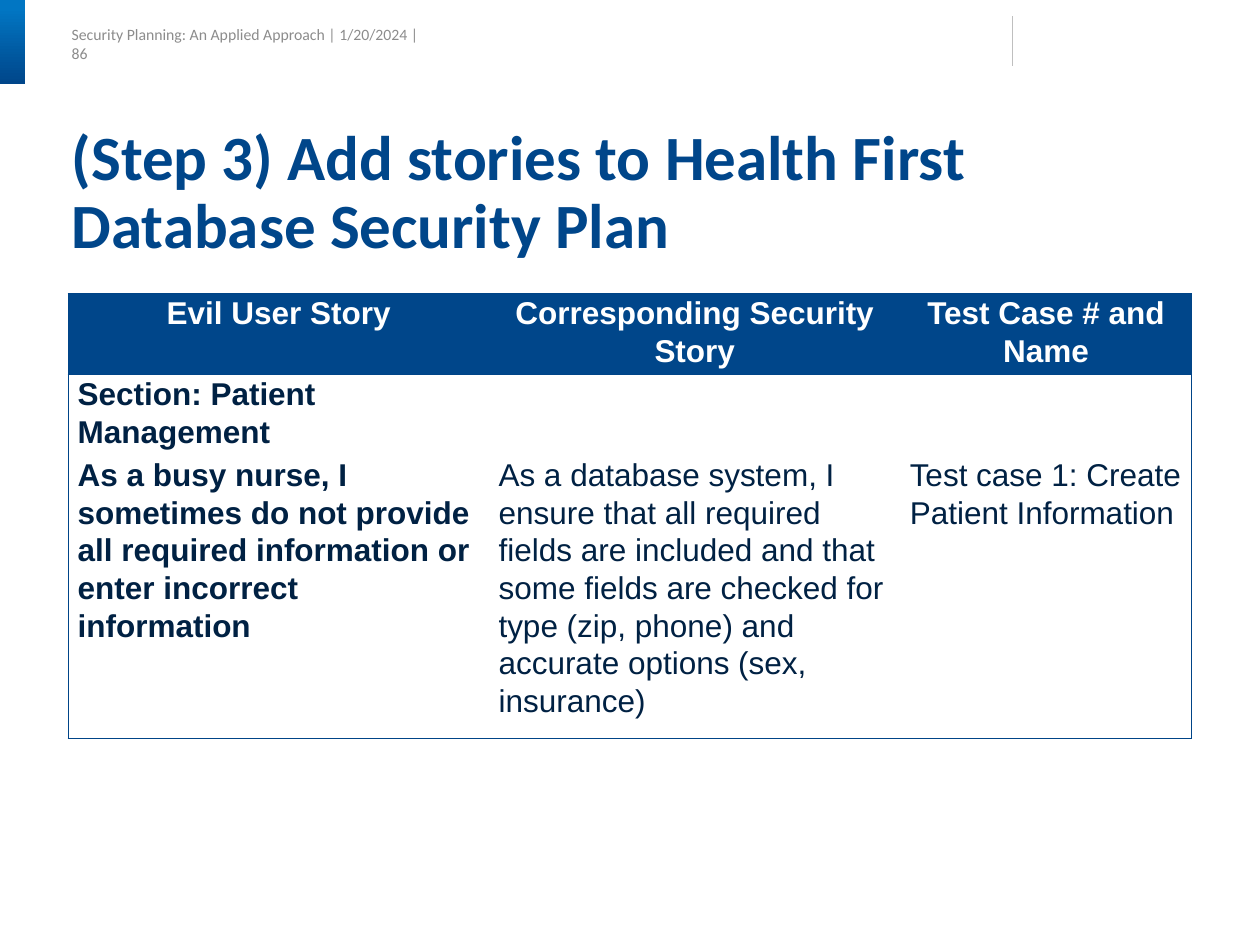
from lxml.etree import SubElement
from pptx import Presentation
from pptx.dml.color import RGBColor
from pptx.enum.shapes import MSO_CONNECTOR as Connector, MSO_SHAPE as Shape
from pptx.enum.text import MSO_ANCHOR as Anchor, MSO_AUTO_SIZE as AutoSize, PP_ALIGN as Align
from pptx.oxml.ns import qn
from pptx.util import Pt

COLORS = {
    "blue": "00468A",
    "light blue": "0176C3",
    "border": "004487",
    "body": "002143",
    "white": "FFFFFF",
    "header": "8C8C8C",
    "rule": "BFBFBF",
}


def set_font(paragraph, name, size, color, bold=False):
    paragraph.font.name = name
    paragraph.font.size = Pt(size)
    paragraph.font.bold = bold
    paragraph.font.color.rgb = RGBColor.from_string(COLORS[color])


def set_borders(cell, visible):
    properties = cell._tc.get_or_add_tcPr()
    for side in "LRTB":
        line = SubElement(properties, qn(f"a:ln{side}"), w=str(Pt(0.75)))
        if side in visible:
            fill = SubElement(line, qn("a:solidFill"))
            SubElement(fill, qn("a:srgbClr"), val=COLORS["border"])
        else:
            SubElement(line, qn("a:noFill"))


deck = Presentation()
deck.slide_width, deck.slide_height = Pt(720), Pt(540)
page = deck.slides.add_slide(deck.slide_layouts[5])

# Running header
header = page.shapes.add_textbox(Pt(41), Pt(16.5), Pt(204.5), Pt(16.5))
frame = header.text_frame
frame.margin_left = frame.margin_top = frame.margin_right = frame.margin_bottom = 0
frame.vertical_anchor = Anchor.MIDDLE
frame.word_wrap = False
frame.text = "Security Planning: An Applied Approach | 1/20/2024 | 86"
set_font(frame.paragraphs[0], "Calibri", 9, "header")

# Corner accent
accent = page.shapes.add_shape(Shape.ROUNDED_RECTANGLE, 0, 0, Pt(14.4), Pt(48))
accent.adjustments[0] = 0
accent.shadow.inherit = False
accent.line.fill.background()
accent.fill.gradient()
accent.fill.gradient_angle = 270
for stop, position, color in zip(accent.fill.gradient_stops, (0.1, 1), ("light blue", "blue")):
    stop.position = position
    stop.color.rgb = RGBColor.from_string(COLORS[color])

# Header rule
rule = page.shapes.add_connector(Connector.STRAIGHT, Pt(578.75), Pt(9.25), Pt(578.75), Pt(37.5))
rule.line.color.rgb = RGBColor.from_string(COLORS["rule"])
rule.line.width = Pt(0.75)
SubElement(rule._element.spPr, qn("a:effectLst"))

# Stories table
rows = [
    ["Evil User Story", "Corresponding Security Story", "Test Case # and Name"],
    ["Section: Patient Management", "", ""],
    [
        "As a busy nurse, I sometimes do not provide all required information "
        "or enter incorrect information",
        "As a database system, I ensure that all required fields are included and that "
        "some fields are checked for type (zip, phone) and accurate options (sex, insurance)",
        "Test case 1: Create Patient Information",
    ],
]
table = page.shapes.add_table(3, 3, Pt(39), Pt(167.75), Pt(642), Pt(205)).table
table.horz_banding = False
for column, width in zip(table.columns, (240.5, 235, 166.5)):
    column.width = Pt(width)
for row, height in zip(table.rows, (45, 22.5, 137.5)):
    row.height = Pt(height)

for row_index, texts in enumerate(rows):
    is_heading = row_index == 0
    for column_index, text in enumerate(texts):
        cell = table.cell(row_index, column_index)
        sides = ("L", "", "R")[column_index] + ("TB" if row_index < 2 else "B")
        set_borders(cell, sides)
        if is_heading:
            cell.fill.solid()
            cell.fill.fore_color.rgb = RGBColor.from_string(COLORS["blue"])
        else:
            cell.fill.background()
        cell.margin_left = cell.margin_right = Pt(5.4)
        cell.margin_top = cell.margin_bottom = 0
        cell.text = text
        para = cell.text_frame.paragraphs[0]
        para.line_spacing = 1.07
        para.alignment = Align.CENTER if is_heading else Align.LEFT
        set_font(para, "Arial", 18, "white" if is_heading else "body",
                 bold=is_heading or column_index == 0)

# Title
title = page.shapes.title
title.left, title.top, title.width, title.height = Pt(41), Pt(72), Pt(642), Pt(78.5)
frame = title.text_frame
frame.margin_left = frame.margin_top = frame.margin_right = frame.margin_bottom = 0
frame.vertical_anchor = Anchor.TOP
frame.word_wrap = True
frame.auto_size = AutoSize.SHAPE_TO_FIT_TEXT
frame.text = "(Step 3) Add stories to Health First Database Security Plan"
para = frame.paragraphs[0]
para.alignment = Align.LEFT
para.line_spacing = 0.9
set_font(para, "Calibri", 36, "blue", bold=True)

deck.save("out.pptx")
